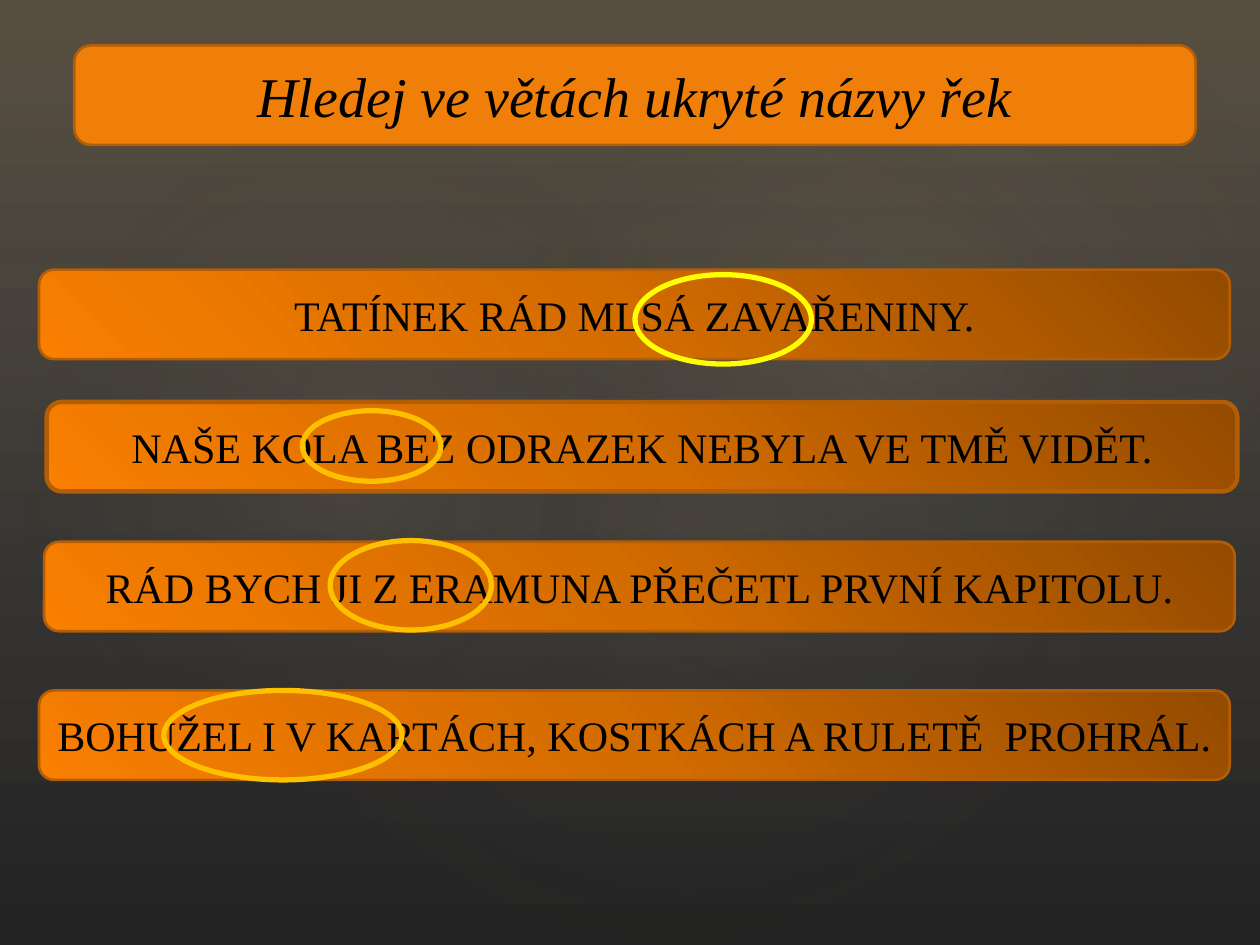
from dataclasses import dataclass

from lxml.etree import SubElement
from pptx import Presentation
from pptx.dml.color import RGBColor
from pptx.enum.shapes import MSO_SHAPE
from pptx.enum.text import MSO_ANCHOR, PP_ALIGN
from pptx.oxml.ns import qn
from pptx.util import Inches, Pt

FONT = "Times New Roman"
BLACK = RGBColor(0x00, 0x00, 0x00)
ORANGE = RGBColor(0xF0, 0x7F, 0x09)
BORDER = RGBColor(0xB2, 0x5E, 0x07)
YELLOW = RGBColor(0xFF, 0xFF, 0x00)
GOLD = RGBColor(0xFF, 0xC0, 0x00)
BG_TOP = RGBColor(0x51, 0x51, 0x51)
BG_BOTTOM = RGBColor(0x22, 0x22, 0x22)
BROWN = RGBColor(0x67, 0x4D, 0x26)
CHARCOAL = RGBColor(0x32, 0x32, 0x32)
SAND = RGBColor(0xDA, 0xC1, 0x9B)
BAR_DARK = RGBColor(0x94, 0x4B, 0x00)
BAR_MID = RGBColor(0xD2, 0x6B, 0x00)
BAR_LIGHT = RGBColor(0xF9, 0x7F, 0x00)

BAR_WIDTH, BAR_HEIGHT = 9.45, 0.71
CENTER = (50, 50, 50, 50)
TOP_RIGHT = (100, 0, 0, 100)


@dataclass(frozen=True)
class Stop:
    position: int
    color: RGBColor
    opacity: int = 100


@dataclass(frozen=True)
class Glow:
    box: tuple[float, float, float, float]
    rotation: float
    opacity: int


@dataclass(frozen=True)
class Sentence:
    text: str
    left: float
    top: float
    ring: tuple[float, float, float, float]
    ring_color: RGBColor = GOLD
    border: float = 1.5


BAR_STOPS = [Stop(0, BAR_DARK), Stop(50, BAR_MID), Stop(100, BAR_LIGHT)]

GLOWS = [
    Glow((1.5, 1.14, 7.92, 6.24), 328.7, 7),
    Glow((-0.3, 1.28, 6.06, 4.9), 294.3, 8),
    Glow((3.58, 0.13, 7.09, 5.2), 328.7, 8),
]

SENTENCES = [
    Sentence("TATÍNEK RÁD MLSÁ ZAVAŘENINY.", 0.31, 2.14,
             (5.04, 2.18, 1.4, 0.71), ring_color=YELLOW),
    Sentence("NAŠE KOLA BEZ ODRAZEK NEBYLA VE TMĚ VIDĚT.", 0.37, 3.19,
             (2.4, 3.26, 1.1, 0.56), border=2.5),
    Sentence("RÁD BYCH JI Z ERAMUNA PŘEČETL PRVNÍ KAPITOLU.", 0.35, 4.3,
             (2.62, 4.29, 1.28, 0.71)),
    Sentence("BOHUŽEL I V KARTÁCH, KOSTKÁCH A RULETĚ  PROHRÁL.", 0.31, 5.48,
             (1.3, 5.48, 1.89, 0.71)),
]


def add_shape(s, kind, box, *, fill=None, line=None, width=1.5):
    sp = s.shapes.add_shape(kind, *(Inches(v) for v in box))
    sp.shadow.inherit = False
    if fill is None:
        sp.fill.background()
    else:
        sp.fill.solid()
        sp.fill.fore_color.rgb = fill
    if line is None:
        sp.line.fill.background()
    else:
        sp.line.color.rgb = line
        sp.line.width = Pt(width)
    return sp


def set_gradient(sp, stops: list[Stop], *, focus=None, angle: int = 90) -> None:
    sp_pr = sp._element.spPr
    grad = SubElement(sp_pr, qn("a:gradFill"), rotWithShape="1")
    sp_pr.replace(sp_pr.find(qn("a:noFill")), grad)
    stop_list = SubElement(grad, qn("a:gsLst"))
    for stop in stops:
        gs = SubElement(stop_list, qn("a:gs"), pos=str(stop.position * 1000))
        color = SubElement(gs, qn("a:srgbClr"), val=str(stop.color))
        if stop.opacity < 100:
            SubElement(color, qn("a:alpha"), val=str(stop.opacity * 1000))
    if focus is None:
        SubElement(grad, qn("a:lin"), ang=str(angle * 60000), scaled="0")
    else:
        path = SubElement(grad, qn("a:path"), path="circle")
        sides = {side: str(v * 1000) for side, v in zip("ltrb", focus)}
        SubElement(path, qn("a:fillToRect"), **sides)


def set_text(sp, text: str, *, size: float, italic: bool = False) -> None:
    tf = sp.text_frame
    tf.word_wrap = True
    tf.vertical_anchor = MSO_ANCHOR.MIDDLE
    p = tf.paragraphs[0]
    p.alignment = PP_ALIGN.CENTER
    r = p.add_run()
    r.text = text
    r.font.name = FONT
    r.font.size = Pt(size)
    r.font.italic = italic
    r.font.color.rgb = BLACK


def draw_background(s) -> None:
    fill = s.background.fill
    fill.gradient()
    fill.gradient_angle = 270
    for stop, color in zip(fill.gradient_stops, (BG_TOP, BG_BOTTOM)):
        stop.color.rgb = color
    veil = add_shape(s, MSO_SHAPE.RECTANGLE, (0, 0, 10, 7.5))
    set_gradient(veil, [Stop(0, BROWN, 36), Stop(100, CHARCOAL, 10)])
    for glow in GLOWS:
        sp = add_shape(s, MSO_SHAPE.OVAL, glow.box)
        sp.rotation = glow.rotation
        set_gradient(sp, [Stop(0, SAND, glow.opacity), Stop(58, CHARCOAL, 0)],
                     focus=CENTER)


def draw_sentence(s, sentence: Sentence) -> None:
    box = (sentence.left, sentence.top, BAR_WIDTH, BAR_HEIGHT)
    bar = add_shape(s, MSO_SHAPE.ROUNDED_RECTANGLE, box,
                    line=BORDER, width=sentence.border)
    set_gradient(bar, BAR_STOPS, focus=TOP_RIGHT)
    set_text(bar, sentence.text, size=24)
    add_shape(s, MSO_SHAPE.OVAL, sentence.ring, line=sentence.ring_color, width=3)


def main() -> None:
    prs = Presentation()
    prs.slide_width, prs.slide_height = Inches(10), Inches(7.5)
    s = prs.slides.add_slide(prs.slide_layouts[6])
    draw_background(s)
    title = add_shape(s, MSO_SHAPE.ROUNDED_RECTANGLE, (0.59, 0.36, 8.9, 0.79),
                      fill=ORANGE, line=BORDER)
    set_text(title, "Hledej ve větách ukryté názvy řek", size=32, italic=True)
    for sentence in SENTENCES:
        draw_sentence(s, sentence)
    prs.save("out.pptx")


if __name__ == "__main__":
    main()
